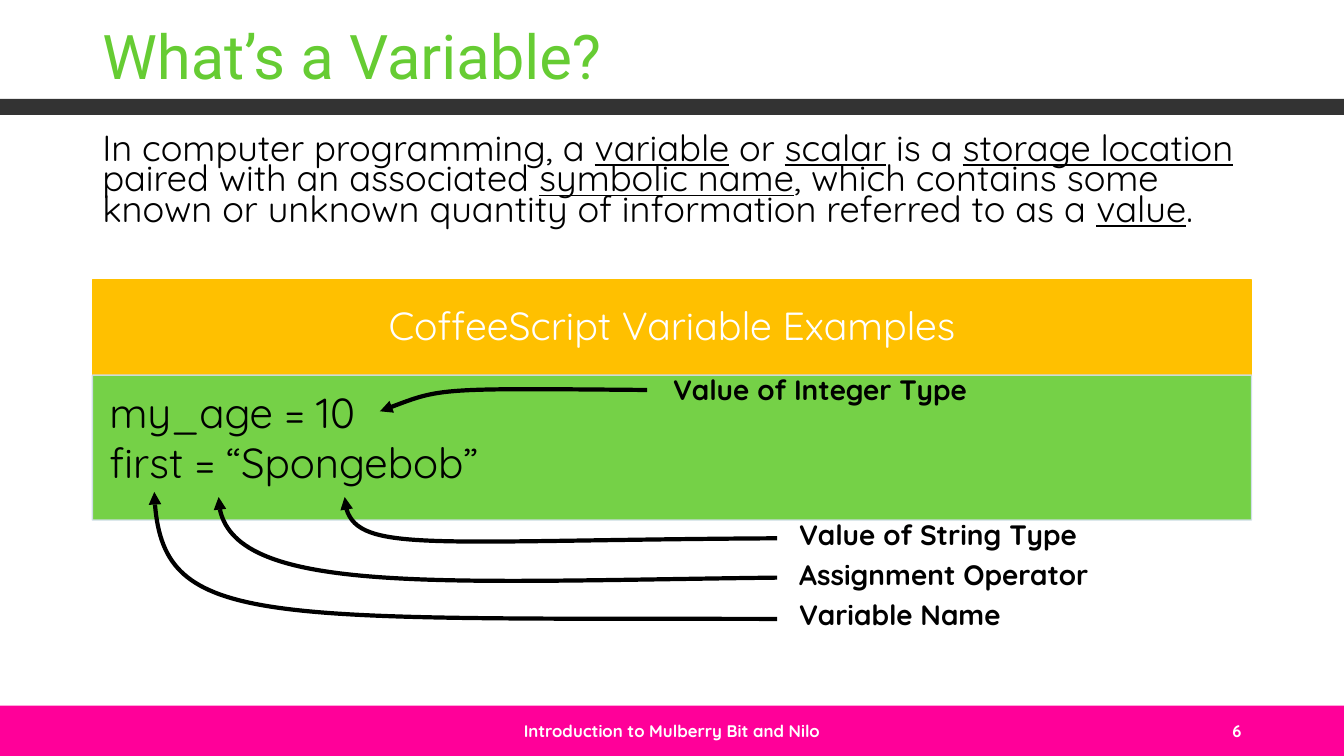
from pptx import Presentation
from pptx.dml.color import RGBColor
from pptx.enum import shapes, text
from pptx.oxml.ns import qn
from pptx.util import Pt
from lxml import etree

# Content: underlined terms are paired with True
TITLE = "What’s a Variable?"
DEFINITION = [
    ("In computer programming, a ", False), ("variable", True), (" or ", False),
    ("scalar", True), (" is a ", False), ("storage location", True),
    (" paired with an associated ", False), ("symbolic name", True),
    (", which contains some known or unknown quantity of information"
     " referred to as a ", False), ("value", True), (".", False),
]
EXAMPLES_TITLE = "CoffeeScript Variable Examples"
EXAMPLES = ["my_age = 10", "first = “Spongebob”"]
FOOTER = "Introduction to Mulberry Bit and Nilo"
PAGE = "6"

# Label, its left and middle, then arrow tip, two curve controls and arrow tail
CALLOUTS = [
    ("Assignment Operator", 563.8, 410.4,
     [(156.2, 355), (156.2, 426.2), (316.1, 415.4), (555.1, 412.6)]),
    ("Value of String Type", 563.8, 381.6,
     [(246.2, 355), (247, 396.7), (308.2, 385.9), (555.1, 384.5)]),
    ("Variable Name", 563.8, 438.5,
     [(110.2, 351.4), (113, 448.6), (185.8, 441.4), (555.1, 442.1)]),
    ("Value of Integer Type", 473.8, 277.9,
     [(271.4, 293.8), (314.6, 277.2), (313.2, 277.2), (462.2, 278.6)]),
]

WIDTH, HEIGHT = 960, 540
LEFT, CONTENT_WIDTH = 66, 828
LABEL_WIDTH, LABEL_HEIGHT = 280, 31.6
BLACK, WHITE, GREEN, AMBER = "000000", "FFFFFF", "66CC33", "FFC000"
ALIGN, ANCHOR = text.PP_ALIGN, text.MSO_ANCHOR

deck = Presentation()
deck.slide_width, deck.slide_height = Pt(WIDTH), Pt(HEIGHT)
slide = deck.slides.add_slide(deck.slide_layouts[6])


def paint(color_format, value, alpha=None):
    """Colour a fill or line from a hex string, with optional opacity in percent."""
    color_format.solid()
    color_format.fore_color.rgb = RGBColor.from_string(value)
    if alpha:
        color = color_format._xPr.find(qn("a:solidFill"))[0]
        etree.SubElement(color, qn("a:alpha")).set("val", str(alpha * 1000))


def add_bar(left, top, width, height, fill, line=None, alpha=None):
    bar = slide.shapes.add_shape(shapes.MSO_SHAPE.RECTANGLE,
                                 Pt(left), Pt(top), Pt(width), Pt(height))
    bar.shadow.inherit = False
    paint(bar.fill, fill, alpha)
    if line:
        bar.line.width = Pt(1)
        paint(bar.line.fill, line, alpha)
    else:
        bar.line.fill.background()
    return bar


def add_box(left, top, width, height):
    return slide.shapes.add_textbox(Pt(left), Pt(top), Pt(width), Pt(height))


def write(holder, paragraphs, size, color=BLACK, font="Quicksand", bold=False,
          align=ALIGN.LEFT, anchor=ANCHOR.MIDDLE, spacing=1.0, after=0,
          insets=(7.2, 3.6, 7.2, 3.6)):
    """Fill a box; each paragraph is a string or a list of (words, underlined)."""
    frame = holder.text_frame
    frame.word_wrap = True
    frame.vertical_anchor = anchor
    (frame.margin_left, frame.margin_top,
     frame.margin_right, frame.margin_bottom) = map(Pt, insets)
    if isinstance(paragraphs, str):
        paragraphs = [paragraphs]
    for i, content in enumerate(paragraphs):
        paragraph = frame.add_paragraph() if i else frame.paragraphs[0]
        paragraph.alignment = align
        paragraph.line_spacing = spacing
        paragraph.space_after = Pt(after)
        runs = [(content, False)] if isinstance(content, str) else content
        for words, underlined in runs:
            run = paragraph.add_run()
            run.text = words
            run.font.name, run.font.size, run.font.bold = font, Pt(size), bold
            run.font.underline = underlined
            run.font.color.rgb = RGBColor.from_string(color)


def bezier(points, t):
    weights = ((1 - t) ** 3, 3 * t * (1 - t) ** 2, 3 * t * t * (1 - t), t ** 3)
    return tuple(sum(w * p[axis] for w, p in zip(weights, points))
                 for axis in (0, 1))


def add_arrow(points):
    """Draw one cubic curve with its arrowhead at the first point."""
    # Sampled points give the frame its true bounds
    outline = [(Pt(x), Pt(y)) for x, y in
               (bezier(points, step / 40) for step in range(41))]
    builder = slide.shapes.build_freeform(*outline[0])
    builder.add_line_segments(outline[1:], close=False)
    arrow = builder.convert_to_shape()
    arrow.shadow.inherit = False
    arrow.fill.background()
    arrow.line.width = Pt(3)
    paint(arrow.line.fill, BLACK)
    # One smooth segment takes the place of the sampled lines
    path = next(arrow._element.iter(qn("a:path")))
    for segment in path.findall(qn("a:lnTo")):
        path.remove(segment)
    curve = etree.SubElement(path, qn("a:cubicBezTo"))
    for x, y in points[1:]:
        point = etree.SubElement(curve, qn("a:pt"))
        point.set("x", str(Pt(x) - arrow.left))
        point.set("y", str(Pt(y) - arrow.top))
    head = etree.SubElement(arrow.line._get_or_add_ln(), qn("a:headEnd"))
    head.set("type", "triangle")


# Footer and header bars
add_bar(0, 504, WIDTH, 36, "FF0099")
add_bar(0, 70.6, WIDTH, 11.5, "333333")

# Title and definition
write(add_box(LEFT, 0, CONTENT_WIDTH, 69.8), TITLE, 44, GREEN, font="Roboto",
      anchor=ANCHOR.BOTTOM, spacing=0.9)
write(add_box(LEFT, 94.3, CONTENT_WIDTH, 102.2), [DEFINITION], 25.9,
      anchor=ANCHOR.TOP, spacing=0.7)

# Footer text
write(add_box(318, 507.6, 324, 28.8), FOOTER, 12, WHITE, bold=True,
      align=ALIGN.CENTER)
write(add_box(678, 507.6, 216, 28.8), PAGE, 12, WHITE, bold=True,
      align=ALIGN.RIGHT)

# Example panel
write(add_bar(LEFT, 200, CONTENT_WIDTH, 68, AMBER, line=AMBER),
      EXAMPLES_TITLE, 28, WHITE, align=ALIGN.CENTER, spacing=0.9,
      insets=(16, 8.5, 16, 8.5))
write(add_bar(LEFT, 268, CONTENT_WIDTH, 103.5, GREEN, line="D2DEEF", alpha=90),
      EXAMPLES, 30, anchor=ANCHOR.TOP, spacing=0.9, after=3,
      insets=(12.2, 12.2, 16.6, 18.7))

# Callouts
for label, left, middle, points in CALLOUTS:
    add_arrow(points)
    write(add_box(left, middle - LABEL_HEIGHT / 2, LABEL_WIDTH, LABEL_HEIGHT),
          label, 20, bold=True)

deck.save("out.pptx")
